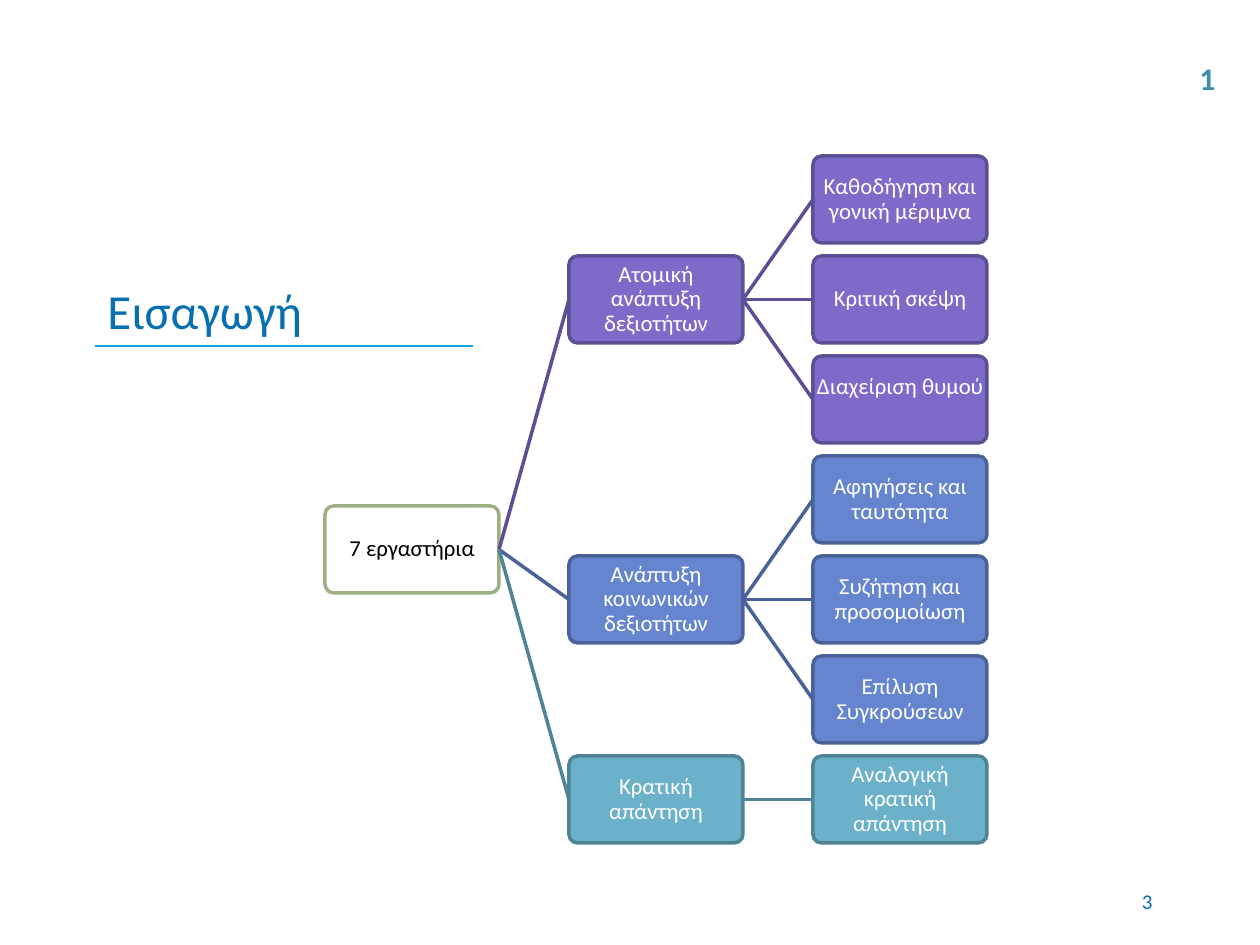
from pptx import Presentation, util as u
from pptx.dml.color import RGBColor
from pptx.enum import shapes, text
from pptx.oxml.ns import qn
from lxml import etree

HUES = {
    "white": "FFFFFF", "black": "000000", "blue": "0770B1", "rule": "0BA7DF",
    "teal": "3E8EA9", "sage": "9CB084",
    "plum": "7E6BC9", "plum_edge": "5D4F95",
    "sky": "6585CF", "sky_edge": "4B6299",
    "aqua": "6BB1C9", "aqua_edge": "4F8395",
}
WIDE, HIGH = 174, 87
LEFT, TOP = 325, 156
COL, ROW = 244, 100

TREE = [
    ("Ατομική ανάπτυξη δεξιοτήτων", "plum",
     ["Καθοδήγηση και γονική μέριμνα", "Κριτική σκέψη", "Διαχείριση θυμού"]),
    ("Ανάπτυξη κοινωνικών δεξιοτήτων", "sky",
     ["Αφηγήσεις και ταυτότητα", "Συζήτηση και προσομοίωση", "Επίλυση Συγκρούσεων"]),
    ("Κρατική απάντηση", "aqua", ["Αναλογική κρατική απάντηση"]),
]
RAISED = {"Διαχείριση θυμού": 24}


def px(n):
    return u.Emu(round(n * 914400 / 126))


def hue(name):
    return RGBColor.from_string(HUES[name])


def write(frame, words, size=13, color="white", bold=False, align="CENTER",
          anchor="MIDDLE", pads=None, lead=None, wrap=True):
    frame.word_wrap = wrap
    frame.vertical_anchor = getattr(text.MSO_ANCHOR, anchor)
    if pads:
        (frame.margin_left, frame.margin_top,
         frame.margin_right, frame.margin_bottom) = map(px, pads)
    para = frame.paragraphs[0]
    para.alignment = getattr(text.PP_ALIGN, align)
    if lead:
        para.line_spacing = lead
    run = para.add_run()
    run.text = words
    font = run.font
    font.name, font.size, font.bold = "Calibri", u.Pt(size), bold
    font.color.rgb = hue(color)


class Deck:
    def __init__(self, wide, high):
        self.file = Presentation()
        self.file.slide_width, self.file.slide_height = px(wide), px(high)
        self.slide = self.file.slides.add_slide(self.file.slide_layouts[6])
        self.shapes = self.slide.shapes

    def label(self, x, y, w, h, words, **style):
        box = self.shapes.add_textbox(px(x), px(y), px(w), px(h))
        write(box.text_frame, words, **style)

    def line(self, x1, y1, x2, y2, color, width):
        line = self.shapes.add_connector(
            shapes.MSO_CONNECTOR.STRAIGHT, px(x1), px(y1), px(x2), px(y2))
        line.line.color.rgb = hue(color)
        line.line.width = u.Pt(width)
        etree.SubElement(line._element.spPr, qn("a:effectLst"))
        return line

    def node(self, col, row, words, fill, edge, color="white"):
        box = self.shapes.add_shape(
            shapes.MSO_SHAPE.ROUNDED_RECTANGLE, px(LEFT + col * COL),
            px(TOP + row * ROW), px(WIDE), px(HIGH))
        box.adjustments[0] = 0.1
        box.shadow.inherit = False
        box.fill.solid()
        box.fill.fore_color.rgb = hue(fill)
        box.line.color.rgb = hue(edge)
        box.line.width = u.Pt(2)
        write(box.text_frame, words, color=color, lead=0.9,
              pads=(1, 1, 1, 1 + RAISED.get(words, 0)))
        return box

    def join(self, start, end, color):
        line = self.line(0, 0, 0, 0, color, 2)
        line.begin_connect(start, 3)
        line.end_connect(end, 1)


def main():
    deck = Deck(1260, 945)
    deck.line(95, 346, 473, 346, "rule", 0.75)
    deck.label(95, 199, 383, 147, "Εισαγωγή", size=28, color="blue",
               align="LEFT", anchor="BOTTOM")
    deck.label(903, 876, 262, 50, "3", size=12, color="blue", align="RIGHT")

    count = sum(len(leaves) for _, _, leaves in TREE)
    root = deck.node(0, count / 2, "7 εργαστήρια", "white", "sage", "black")
    row = 0
    for topic, fill, leaves in TREE:
        edge = fill + "_edge"
        hub = deck.node(1, row + (len(leaves) - 1) / 2, topic, fill, edge)
        deck.join(root, hub, edge)
        for leaf in leaves:
            deck.join(hub, deck.node(2, row, leaf, fill, edge), edge)
            row += 1

    deck.label(1187, 53, 41, 50, "1", size=18, color="teal", bold=True,
               align="LEFT", anchor="TOP", wrap=False)
    deck.file.save("out.pptx")


if __name__ == "__main__":
    main()
